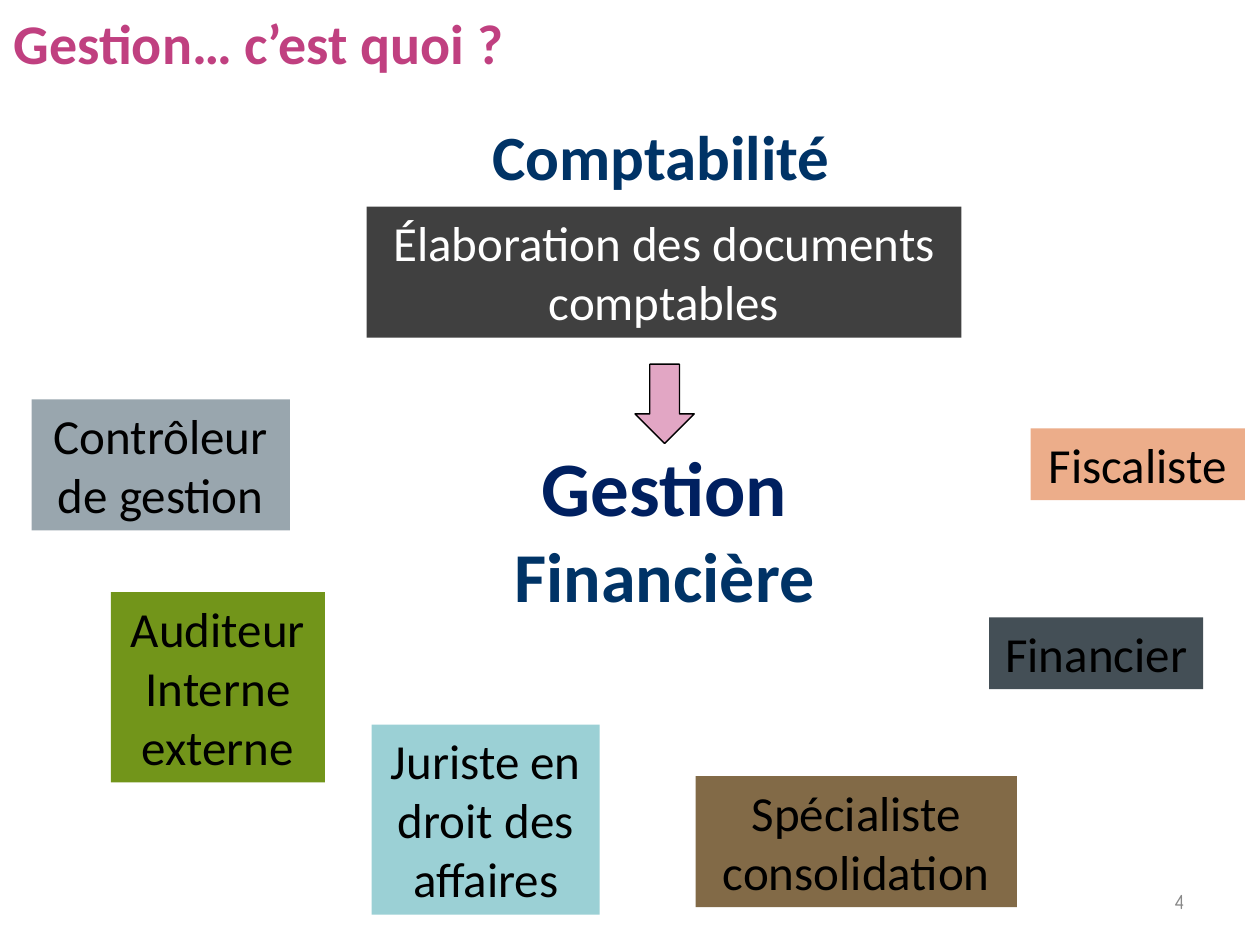
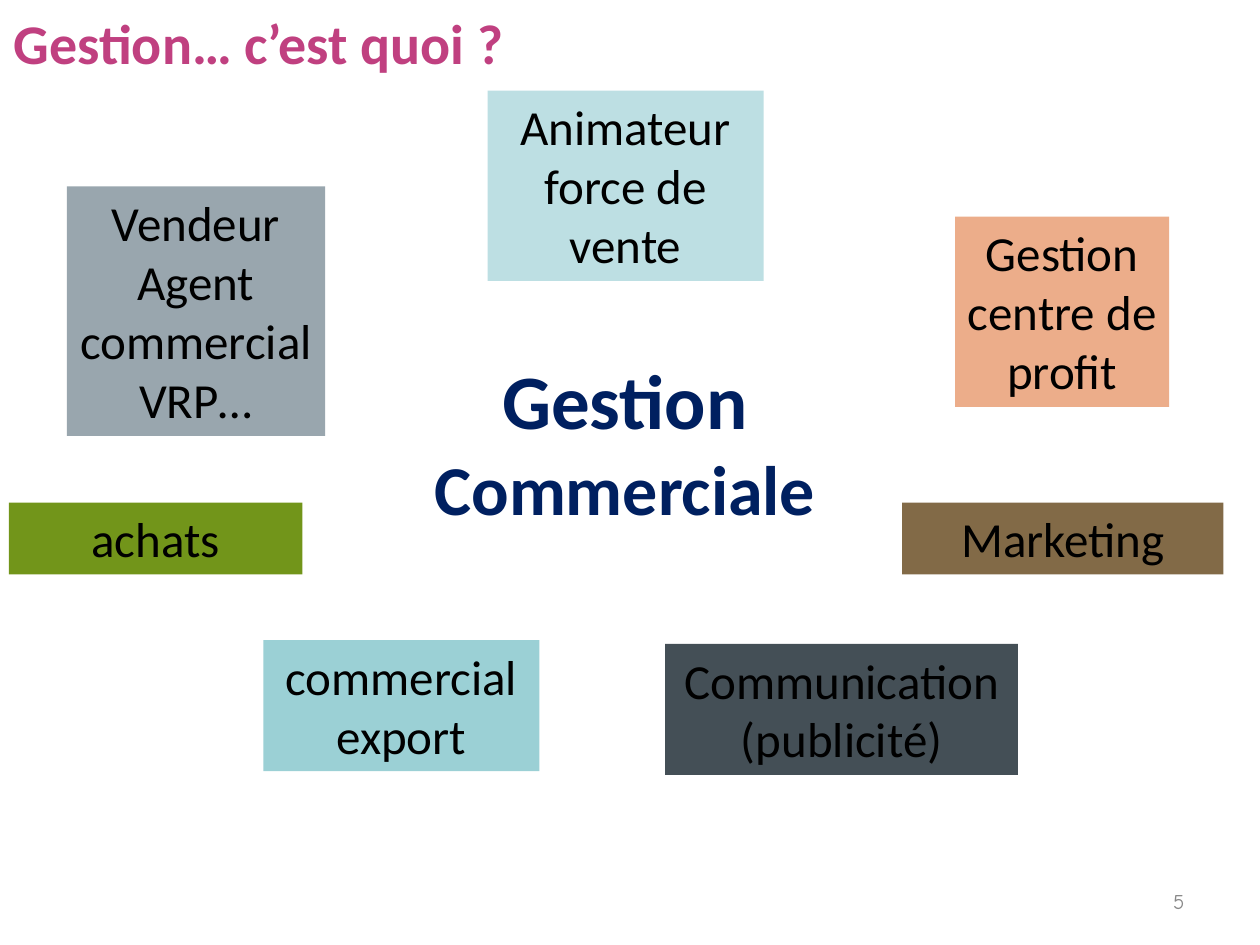
from dataclasses import dataclass

from pptx import Presentation
from pptx.dml.color import RGBColor
from pptx.enum.shapes import MSO_SHAPE
from pptx.enum.text import MSO_ANCHOR, MSO_AUTO_SIZE, PP_ALIGN
from pptx.slide import Slide
from pptx.text.text import TextFrame
from pptx.util import Inches, Pt

RECTANGLE = MSO_SHAPE.RECTANGLE
DOWN_ARROW = MSO_SHAPE.DOWN_ARROW
LEFT, CENTER, RIGHT = PP_ALIGN.LEFT, PP_ALIGN.CENTER, PP_ALIGN.RIGHT
MIDDLE = MSO_ANCHOR.MIDDLE
TOP = MSO_ANCHOR.TOP
FIT_SHAPE = MSO_AUTO_SIZE.SHAPE_TO_FIT_TEXT

BODY_FONT = "Calibri"
NUMBER_FONT = "Comic Neue"
BLACK, WHITE = "000000", "FFFFFF"
MAGENTA, PINK = "C04080", "E2A6C4"
NAVY, BLUE = "002060", "003366"
CHARCOAL, SLATE, GREY = "404040", "444F56", "99A6AE"
GREEN, PEACH, BROWN = "72951A", "ECAD8A", "826A47"
TEAL, PALE_TEAL = "9BD0D5", "BDDFE3"
NUMBER_GREY = "898989"

LINE_HEIGHT = 0.47
BOX_PADDING = 0.1


@dataclass(frozen=True)
class TextLine:
    text: str
    size: int
    color: str
    bold: bool = False
    font: str = BODY_FONT


@dataclass(frozen=True)
class Label:
    """Free text; wrap is False when the width follows the text."""
    left: float
    top: float
    width: float
    height: float
    lines: tuple[TextLine, ...]
    align: PP_ALIGN = LEFT
    wrap: bool = False
    anchor: MSO_ANCHOR = TOP


@dataclass(frozen=True)
class JobBox:
    """Filled box whose height follows its number of displayed lines."""
    left: float
    top: float
    width: float
    line_count: int
    fill: str
    paragraphs: tuple[str, ...]
    color: str = BLACK

    @property
    def height(self) -> float:
        return BOX_PADDING + LINE_HEIGHT * self.line_count


def rgb(color: str) -> RGBColor:
    return RGBColor.from_string(color)


def write_lines(frame: TextFrame, lines: tuple[TextLine, ...], align: PP_ALIGN) -> None:
    for index, line in enumerate(lines):
        paragraph = frame.add_paragraph() if index else frame.paragraphs[0]
        paragraph.text = line.text
        paragraph.alignment = align
        paragraph.font.name = line.font
        paragraph.font.size = Pt(line.size)
        paragraph.font.bold = line.bold
        paragraph.font.color.rgb = rgb(line.color)


def add_label(slide: Slide, label: Label) -> None:
    textbox = slide.shapes.add_textbox(
        Inches(label.left), Inches(label.top), Inches(label.width), Inches(label.height)
    )
    frame = textbox.text_frame
    frame.word_wrap = label.wrap
    frame.vertical_anchor = label.anchor
    if not label.wrap:
        frame.auto_size = FIT_SHAPE
    write_lines(frame, label.lines, label.align)


def add_job_box(slide: Slide, job: JobBox) -> None:
    box = slide.shapes.add_shape(
        RECTANGLE, Inches(job.left), Inches(job.top), Inches(job.width), Inches(job.height)
    )
    box.shadow.inherit = False
    box.fill.solid()
    box.fill.fore_color.rgb = rgb(job.fill)
    box.line.fill.background()
    frame = box.text_frame
    frame.word_wrap = True
    frame.vertical_anchor = TOP
    frame.auto_size = FIT_SHAPE
    lines = tuple(TextLine(text, 28, job.color) for text in job.paragraphs)
    write_lines(frame, lines, CENTER)


def add_down_arrow(slide: Slide) -> None:
    arrow = slide.shapes.add_shape(
        DOWN_ARROW, Inches(5.04), Inches(2.89), Inches(0.47), Inches(0.63)
    )
    arrow.shadow.inherit = False
    arrow.fill.solid()
    arrow.fill.fore_color.rgb = rgb(PINK)
    arrow.line.color.rgb = rgb(BLACK)
    arrow.line.width = Pt(0.75)


def management_heading(left: float, top: float, width: float, field: str, color: str) -> Label:
    lines = (TextLine("Gestion", 44, NAVY, True), TextLine(field, 40, color, True))
    return Label(left, top, width, 1.51, lines, CENTER)


TITLE = Label(0.01, 0.02, 4.13, 0.64, (TextLine("Gestion… c’est quoi ?", 32, MAGENTA, True),))

ACCOUNTING_HEADING = Label(3.81, 0.88, 2.91, 0.71, (TextLine("Comptabilité", 36, BLUE, True),))

FINANCE_HEADING = management_heading(3.97, 3.44, 2.61, "Financière", BLUE)
FINANCE_JOBS = (
    JobBox(2.91, 1.64, 4.72, 2, CHARCOAL, ("Élaboration des documents comptables",), WHITE),
    JobBox(0.25, 3.17, 2.05, 2, GREY, ("Contrôleur de gestion",)),
    JobBox(0.88, 4.7, 1.7, 3, GREEN, ("Auditeur", "Interne", "externe")),
    JobBox(7.85, 4.9, 1.7, 1, SLATE, ("Financier",)),
    JobBox(8.18, 3.4, 1.7, 1, PEACH, ("Fiscaliste",)),
    JobBox(2.95, 5.75, 1.81, 3, TEAL, ("Juriste en droit des affaires",)),
    JobBox(5.52, 6.16, 2.55, 2, BROWN, ("Spécialiste consolidation",)),
)

SALES_HEADING = management_heading(3.33, 2.75, 3.26, "Commerciale", NAVY)
SALES_JOBS = (
    JobBox(0.53, 1.48, 2.05, 4, GREY, ("Vendeur", "Agent commercial", "VRP…")),
    JobBox(0.07, 3.99, 2.33, 1, GREEN, ("achats",)),
    JobBox(5.28, 5.11, 2.8, 2, SLATE, ("Communication", "(publicité)")),
    JobBox(7.58, 1.72, 1.7, 3, PEACH, ("Gestion centre de profit",)),
    JobBox(2.09, 5.08, 2.19, 2, TEAL, ("commercial export",)),
    JobBox(7.16, 3.99, 2.55, 1, BROWN, ("Marketing",)),
    JobBox(3.87, 0.72, 2.19, 3, PALE_TEAL, ("Animateur force de vente",)),
)


def add_management_slide(
    deck: Presentation, number: int, heading: Label, jobs: tuple[JobBox, ...]
) -> Slide:
    slide = deck.slides.add_slide(deck.slide_layouts[6])
    page_number = TextLine(str(number), 12, NUMBER_GREY, font=NUMBER_FONT)
    add_label(slide, Label(7.17, 6.95, 2.33, 0.4, (page_number,), RIGHT, True, MIDDLE))
    add_label(slide, heading)
    for job in jobs:
        add_job_box(slide, job)
    add_label(slide, TITLE)
    return slide


def main() -> None:
    deck = Presentation()
    deck.slide_width = Inches(10)
    deck.slide_height = Inches(7.5)

    finance = add_management_slide(deck, 4, FINANCE_HEADING, FINANCE_JOBS)
    add_label(finance, ACCOUNTING_HEADING)
    add_down_arrow(finance)
    add_management_slide(deck, 5, SALES_HEADING, SALES_JOBS)

    deck.save("out.pptx")


if __name__ == "__main__":
    main()
